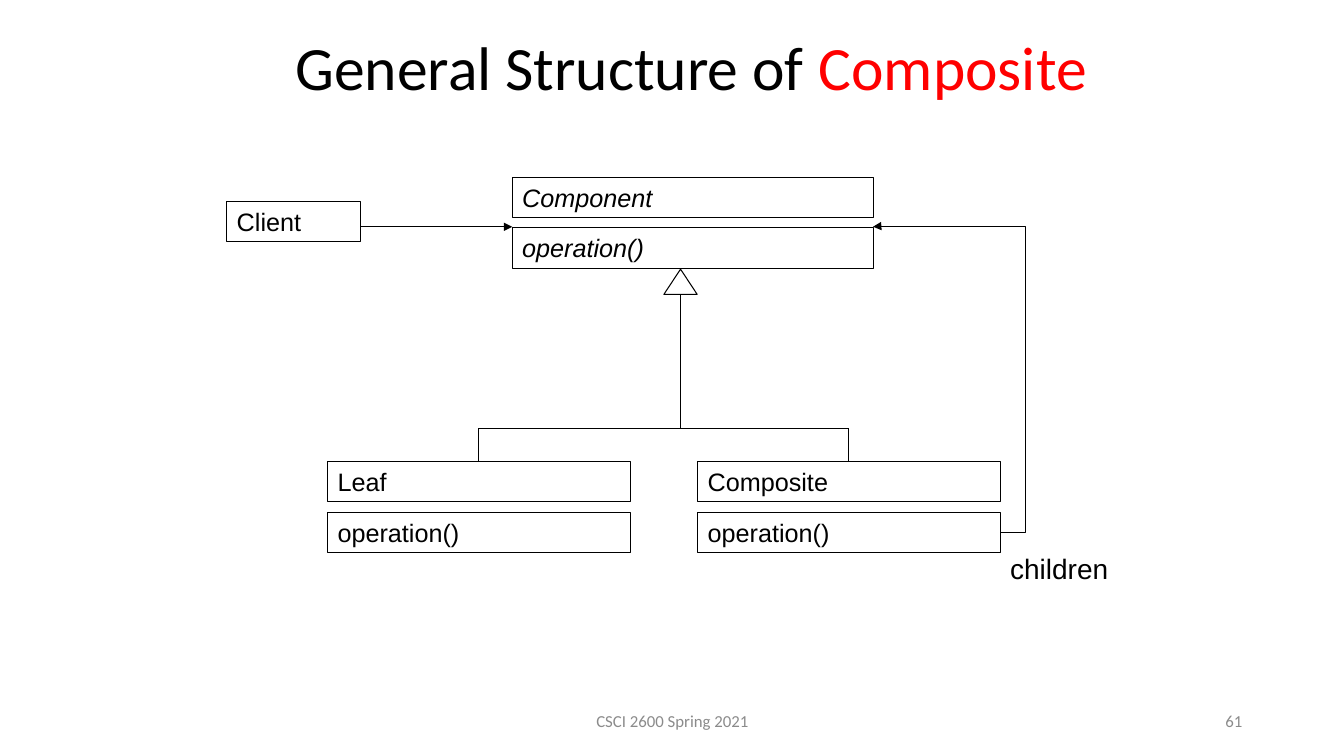
from lxml import etree
from pptx import Presentation
from pptx.dml import color
from pptx.enum import shapes, text
from pptx.oxml import ns
from pptx.util import Inches, Pt

COLORS = {"ink": "000000", "accent": "FF0000", "paper": "FFFFFF", "muted": "8B8B8B"}
TITLE = [("General Structure of ", "ink"), ("Composite", "accent")]

# Class boxes: name, left, top, width, rows, italic
CLASSES = [
    ("Component", 5.08, 1.76, 3.58, ["Component", "operation()"], True),
    ("Client", 2.25, 2, 1.33, ["Client"], False),
    ("Leaf", 3.25, 4.58, 3, ["Leaf", "operation()"], False),
    ("Composite", 6.92, 4.58, 3, ["Composite", "operation()"], False),
]
ROW_H, ROW_STEP = 0.4, 0.5

# Plain text: words, left, top, width, height, font, size, color, alignment, anchor
LABELS = [
    ("children", 9.92, 5.42, 1.25, 0.43, "Arial", 20, "ink", "LEFT", "TOP"),
    ("CSCI 2600 Spring 2021", 4.42, 6.95, 4.5, 0.4, "Calibri", 12, "muted", "CENTER", "MIDDLE"),
    ("61", 9.42, 6.95, 3, 0.4, "Calibri", 12, "muted", "RIGHT", "MIDDLE"),
]

# Inheritance tree and association arrows
STEM_X, BRANCH_Y = 6.75, 4.25
TRIANGLE_TOP, TRIANGLE_W, TRIANGLE_H = 2.67, 0.33, 0.25
ARROW_Y = 2.25
CHILDREN_BEND = {"adj1": -20000, "adj2": 100200}


def rgb(name):
    return color.RGBColor.from_string(COLORS[name])


def style_run(r, font, size, ink, italic=False):
    r.font.name, r.font.size, r.font.italic = font, Pt(size), italic
    r.font.color.rgb = rgb(ink)


def outline(sp):
    sp.line.color.rgb = rgb("ink")
    sp.line.width = Pt(0.75)


def add_row(slide, words, left, top, width, italic):
    sp = slide.shapes.add_shape(shapes.MSO_SHAPE.RECTANGLE, Inches(left), Inches(top),
                                Inches(width), Inches(ROW_H))
    sp.shadow.inherit = False
    sp.fill.background()
    outline(sp)
    tf = sp.text_frame
    tf.text = words
    tf.vertical_anchor = text.MSO_ANCHOR.TOP
    p = tf.paragraphs[0]
    p.alignment = text.PP_ALIGN.LEFT
    p.space_before = Pt(9)
    style_run(p.runs[0], "Arial", 18, "ink", italic)
    return sp


def add_line(slide, start, end, arrow=False, kind=shapes.MSO_CONNECTOR.STRAIGHT):
    line = slide.shapes.add_connector(kind, *(Inches(v) for v in (*start, *end)))
    outline(line)
    etree.SubElement(line._element.spPr, ns.qn("a:effectLst"))
    if arrow:
        etree.SubElement(line.line._get_or_add_ln(), ns.qn("a:tailEnd"), type="triangle")
    return line


def main():
    prs = Presentation()
    prs.slide_width, prs.slide_height = Inches(13.33), Inches(7.5)
    slide = prs.slides.add_slide(prs.slide_layouts[5])

    # Title
    title = slide.shapes.title
    title.left, title.top, title.width, title.height = (Inches(v) for v in (2.83, 0.08, 8.5, 1.25))
    tf = title.text_frame
    tf.auto_size = text.MSO_AUTO_SIZE.NONE
    tf.vertical_anchor = text.MSO_ANCHOR.MIDDLE
    p = tf.paragraphs[0]
    p.alignment, p.line_spacing = text.PP_ALIGN.LEFT, 0.9
    for words, ink in TITLE:
        r = p.add_run()
        r.text = words
        style_run(r, "Calibri", 44, ink)

    # Class boxes, keeping the top row of each for the connectors
    heads, edges = {}, {}
    for name, left, top, width, rows, italic in CLASSES:
        boxes = [add_row(slide, words, left, top + i * ROW_STEP, width, italic)
                 for i, words in enumerate(rows)]
        heads[name] = boxes[0]
        edges[name] = (left, left + width, top + (len(rows) - 1) * ROW_STEP + ROW_H / 2)

    # Inheritance tree
    tri = slide.shapes.add_shape(shapes.MSO_SHAPE.ISOSCELES_TRIANGLE,
                                 Inches(STEM_X - TRIANGLE_W / 2), Inches(TRIANGLE_TOP),
                                 Inches(TRIANGLE_W), Inches(TRIANGLE_H))
    tri.shadow.inherit = False
    tri.fill.solid()
    tri.fill.fore_color.rgb = rgb("paper")
    outline(tri)
    add_line(slide, (STEM_X, TRIANGLE_TOP + TRIANGLE_H), (STEM_X, BRANCH_Y))
    branch_xs = []
    for name in ("Leaf", "Composite"):
        x = sum(edges[name][:2]) / 2
        drop = add_line(slide, (x, BRANCH_Y), (x, BRANCH_Y + 0.33))
        drop.end_connect(heads[name], 0)
        branch_xs.append(x)
    add_line(slide, (branch_xs[0], BRANCH_Y), (branch_xs[1], BRANCH_Y))

    # Association arrows
    add_line(slide, (edges["Client"][1], ARROW_Y), (edges["Component"][0], ARROW_Y), arrow=True)
    children = add_line(slide, edges["Composite"][1:], (edges["Component"][1], ARROW_Y),
                        arrow=True, kind=shapes.MSO_CONNECTOR.ELBOW)
    geom = children._element.spPr.find(ns.qn("a:prstGeom"))
    geom.set("prst", "bentConnector4")
    guides = geom.find(ns.qn("a:avLst"))
    for name, value in CHILDREN_BEND.items():
        etree.SubElement(guides, ns.qn("a:gd"), name=name, fmla=f"val {value}")

    # Label, footer and slide number
    for words, left, top, width, height, font, size, ink, align, anchor in LABELS:
        tf = slide.shapes.add_textbox(*(Inches(v) for v in (left, top, width, height))).text_frame
        tf.word_wrap = True
        tf.text = words
        tf.vertical_anchor = text.MSO_ANCHOR[anchor]
        p = tf.paragraphs[0]
        p.alignment = text.PP_ALIGN[align]
        style_run(p.runs[0], font, size, ink)

    prs.save("out.pptx")


if __name__ == "__main__":
    main()
